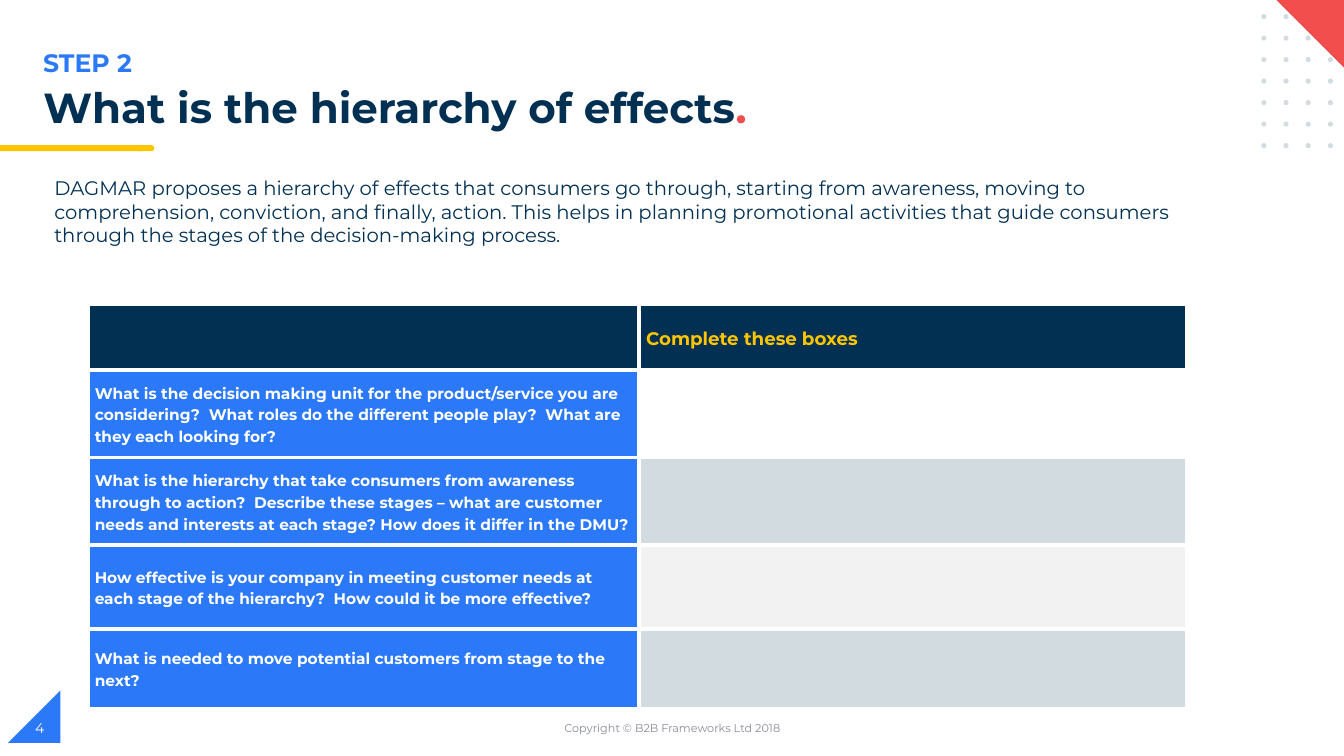
from itertools import product

from lxml import etree
from pptx import Presentation
from pptx import util as u
from pptx.dml.color import RGBColor
from pptx.enum import shapes, text
from pptx.oxml import ns

BLUE, NAVY, YELLOW, RED = "2B79F8", "023053", "FFC600", "F24E4E"
WHITE, GREY, PALE, MUTED = "FFFFFF", "D1DBE0", "F2F2F2", "888C97"
SHAPE, ANCHOR = shapes.MSO_SHAPE, text.MSO_ANCHOR

QUESTIONS = [
    ("What is the decision making unit for the product/service you are considering?  "
     "What roles do the different people play?  What are they each looking for?", WHITE),
    ("What is the hierarchy that take consumers from awareness through to action?  "
     "Describe these stages – what are customer needs and interests at each stage? "
     "How does it differ in the DMU?", GREY),
    ("How effective is your company in meeting customer needs at each stage of the "
     "hierarchy?  How could it be more effective?", PALE),
    ("What is needed to move potential customers from stage to the next?", GREY),
]


def rgb(value):
    return RGBColor.from_string(value)


class SlideBuilder:
    """Holds the current slide and its font."""

    def __init__(self, s, font="Montserrat"):
        self.s, self.font = s, font

    def style(self, r, size, color, bold=False):
        r.font.name, r.font.size, r.font.bold = self.font, u.Pt(size), bold
        r.font.color.rgb = rgb(color)

    def shape(self, kind, box, color, rotation=0):
        sp = self.s.shapes.add_shape(kind, *map(u.Inches, box))
        sp.shadow.inherit = False
        sp.fill.solid()
        sp.fill.fore_color.rgb = rgb(color)
        sp.line.fill.background()
        sp.rotation = rotation

    def text(self, words, box, size, color, bold=False, anchor=ANCHOR.TOP,
             align=text.PP_ALIGN.LEFT):
        tf = self.s.shapes.add_textbox(*map(u.Inches, box)).text_frame
        tf.word_wrap, tf.vertical_anchor = True, anchor
        tf.text = words
        p = tf.paragraphs[0]
        p.alignment = align
        self.style(p.runs[0], size, color, bold)

    def title(self, words, end, box):
        sp = self.s.shapes.title
        sp.left, sp.top, sp.width, sp.height = map(u.Inches, box)
        tf = sp.text_frame
        tf.auto_size, tf.vertical_anchor = text.MSO_AUTO_SIZE.NONE, ANCHOR.TOP
        p = tf.paragraphs[0]
        p.alignment, p.line_spacing = text.PP_ALIGN.LEFT, 0.9
        for part, color in ((words, NAVY), (end, RED)):
            r = p.add_run()
            r.text = part
            self.style(r, 30, color, True)

    def table(self, left, top, widths, heights):
        size = len(heights), len(widths)
        box = map(u.Inches, (left, top, sum(widths), sum(heights)))
        table = self.s.shapes.add_table(*size, *box).table
        table.first_row = table.horz_banding = False
        for column, width in zip(table.columns, widths):
            column.width = u.Inches(width)
        for row, height in zip(table.rows, heights):
            row.height = u.Inches(height)
        return table

    def cell(self, cell, fill, words="", size=11, color=WHITE):
        cell.margin_left = cell.margin_right = u.Inches(0.07)
        cell.margin_top = cell.margin_bottom = 0
        cell.vertical_anchor = ANCHOR.MIDDLE
        self.border(cell)
        cell.fill.solid()
        cell.fill.fore_color.rgb = rgb(fill)
        if words:
            cell.text_frame.text = words
            p = cell.text_frame.paragraphs[0]
            p.line_spacing = 1.15
            self.style(p.runs[0], size, color, True)

    def border(self, cell, color=WHITE, width=3):
        """Draw all four sides; must run before the cell is filled."""
        tc_pr = cell._tc.get_or_add_tcPr()
        for side in ("lnL", "lnR", "lnT", "lnB"):
            ln = etree.SubElement(tc_pr, ns.qn(f"a:{side}"), w=str(u.Pt(width)))
            fill = etree.SubElement(ln, ns.qn("a:solidFill"))
            etree.SubElement(fill, ns.qn("a:srgbClr"), val=color)


def main():
    prs = Presentation()
    prs.slide_width, prs.slide_height = u.Inches(13.33), u.Inches(7.5)
    b = SlideBuilder(prs.slides.add_slide(prs.slide_layouts[5]))

    b.shape(SHAPE.RIGHT_TRIANGLE, (0.08, 6.85, 0.52, 0.52), BLUE, 270)
    b.shape(SHAPE.FLOWCHART_TERMINATOR, (1.34, 1.44, 0.19, 0.06), YELLOW)
    b.shape(SHAPE.RECTANGLE, (0, 1.44, 1.41, 0.06), YELLOW)
    for row, col in product(range(7), range(4)):
        b.shape(SHAPE.OVAL, (12.51 + 0.22 * col, 0.14 + 1.28 * row / 6, 0.05, 0.05), GREY)
    b.shape(SHAPE.RIGHT_TRIANGLE, (12.65, -0.01, 0.72, 0.72), RED, 180)

    b.text("STEP 2", (0.33, 0.42, 6.69, 0.4), 18, BLUE, bold=True)
    b.title("What is the hierarchy of effects", ".", (0.33, 0.82, 11.43, 0.56))
    b.text("DAGMAR proposes a hierarchy of effects that consumers go through, starting from "
           "awareness, moving to comprehension, conviction, and finally, action. This helps in "
           "planning promotional activities that guide consumers through the stages of the "
           "decision-making process.", (0.44, 1.7, 11.97, 0.81), 14, NAVY)

    table = b.table(0.87, 3.02, (5.47, 5.43), (0.65, 0.87, 0.87, 0.83, 0.79))
    b.cell(table.cell(0, 0), NAVY)
    b.cell(table.cell(0, 1), NAVY, "Complete these boxes", 13, YELLOW)
    for row, (question, answer_fill) in enumerate(QUESTIONS, 1):
        b.cell(table.cell(row, 0), BLUE, question)
        b.cell(table.cell(row, 1), answer_fill)

    b.text("Copyright © B2B Frameworks Ltd 2018", (4.42, 7.02, 4.5, 0.4), 8, MUTED,
           anchor=ANCHOR.MIDDLE, align=text.PP_ALIGN.CENTER)
    b.text("4", (0.25, 7.02, 3, 0.4), 10, WHITE, anchor=ANCHOR.MIDDLE)
    prs.save("out.pptx")


if __name__ == "__main__":
    main()
